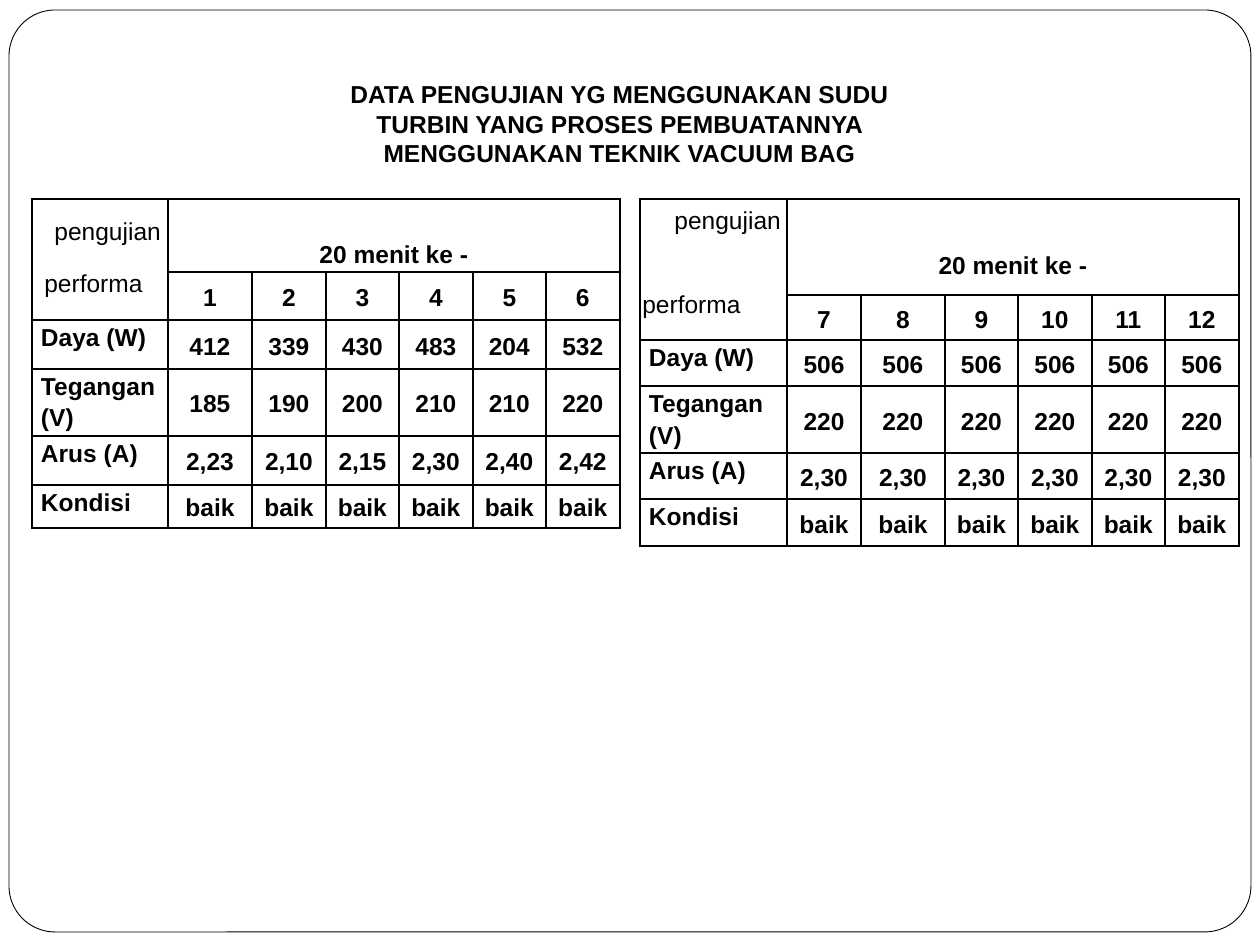
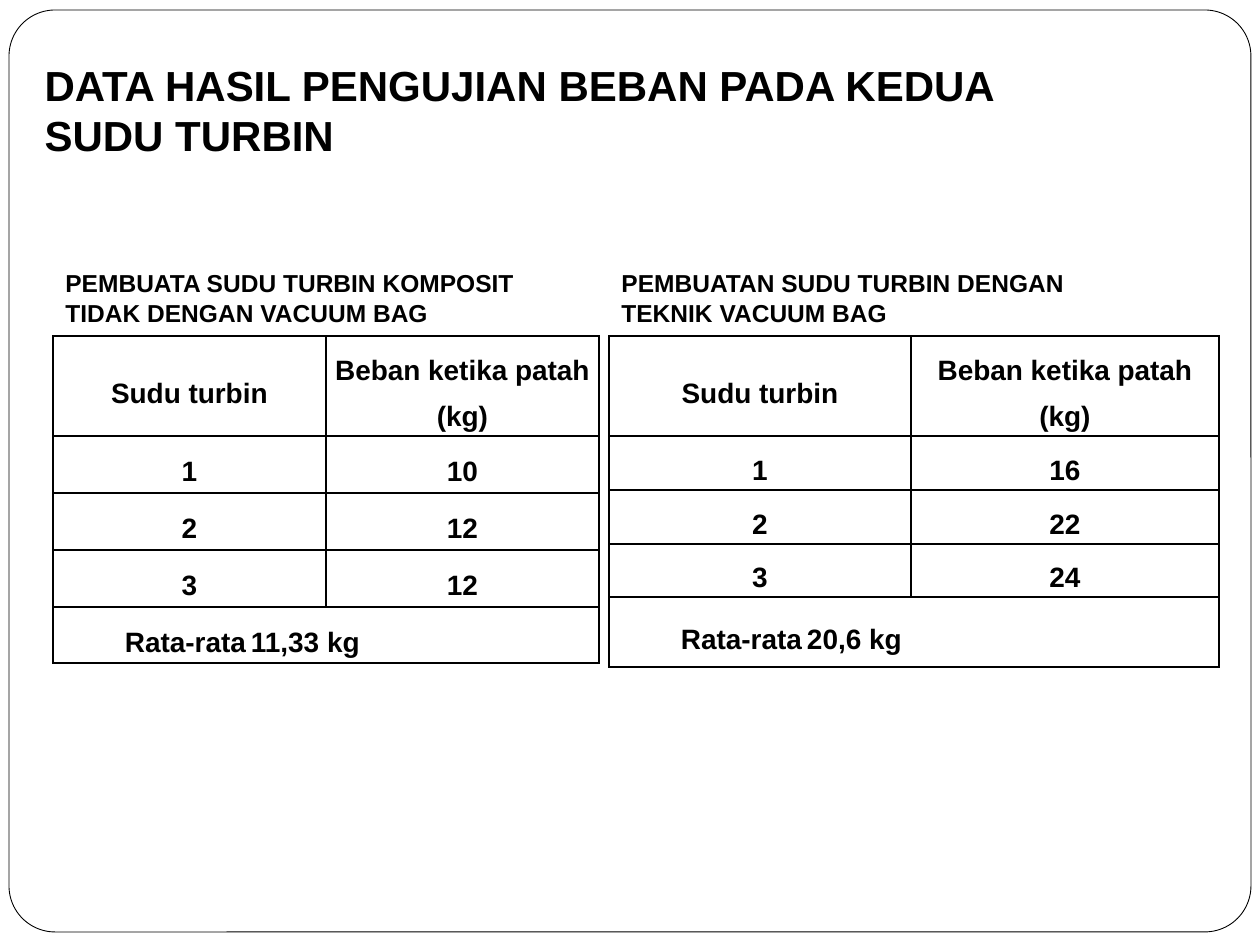
from lxml.etree import SubElement
from pptx import Presentation
from pptx.dml.color import RGBColor
from pptx.enum.shapes import MSO_SHAPE
from pptx.enum.text import MSO_ANCHOR as ANCHOR, MSO_AUTO_SIZE as AUTO, PP_ALIGN as ALIGN
from pptx.oxml import parse_xml
from pptx.oxml.ns import nsdecls, qn
from pptx.util import Inches, Pt

BLACK = RGBColor(0, 0, 0)
WHITE = RGBColor(255, 255, 255)
FONT = "Arial"
PX_PER_INCH = 126
CELL_INSET = 9
HEADER_DROP = 34

PERFORMANCE_LABELS = ["Daya (W)", "Tegangan (V)", "Arus (A)", "Kondisi"]


def px(n):
    """Turn pixels into EMU."""
    return Inches(n / PX_PER_INCH)


def style_paragraph(p, size, bold=False, align=ALIGN.LEFT, spacing=None):
    """Format one paragraph."""
    p.alignment = align
    p.line_spacing = spacing
    f = p.font
    f.name, f.size, f.bold = FONT, Pt(size), bold
    f.color.rgb = BLACK


def add_frame(slide):
    """Put the rounded page frame on the slide's layout, behind its placeholders."""
    sp = slide.shapes.add_shape(MSO_SHAPE.ROUNDED_RECTANGLE, px(9), px(10), px(1242), px(922))
    sp.adjustments[0] = 0.05
    sp.shadow.inherit = False
    sp.fill.solid()
    sp.fill.fore_color.rgb = WHITE
    sp.line.color.rgb = BLACK
    sp.line.width = Pt(0.5)
    sp.element.nvSpPr.cNvPr.set("id", "20")
    slide.slide_layout.shapes[0].element.addprevious(sp.element)


def fill_box(sp, box, text, size, bold, align=ALIGN.LEFT):
    """Place a text shape in a box and write its text."""
    sp.left, sp.top, sp.width, sp.height = map(px, box)
    tf = sp.text_frame
    tf.word_wrap = True
    tf.auto_size = AUTO.NONE
    tf.vertical_anchor = ANCHOR.TOP
    tf.text = text
    style_paragraph(tf.paragraphs[0], size, bold, align)


def add_label(slide, box, text, bold=False):
    """Add a small text box."""
    sp = slide.shapes.add_textbox(0, 0, 0, 0)
    fill_box(sp, box, text, 14, bold)


def add_tabs(p, stops):
    """Give a paragraph left tab stops."""
    tabs = SubElement(p._p.get_or_add_pPr(), qn("a:tabLst"))
    for stop in stops:
        SubElement(tabs, qn("a:tab"), pos=str(px(stop)), algn="l")


def style_cell(cell):
    """Give a cell thin black borders, no fill and narrow insets."""
    tc_pr = cell._tc.get_or_add_tcPr()
    for side in "LRTB":
        tc_pr.append(parse_xml(
            f'<a:ln{side} {nsdecls("a")} w="12700"><a:solidFill>'
            f'<a:srgbClr val="{BLACK}"/></a:solidFill></a:ln{side}>'))
    cell.fill.background()
    cell.margin_left = cell.margin_right = px(CELL_INSET)
    cell.margin_top = cell.margin_bottom = 0
    cell.vertical_anchor = ANCHOR.MIDDLE


def add_grid(slide, left, top, widths, heights):
    """Add an empty bordered table."""
    table = slide.shapes.add_table(len(heights), len(widths), px(left), px(top),
                                   px(sum(widths)), px(sum(heights))).table
    table.first_row = table.horz_banding = False
    for col, w in zip(table.columns, widths):
        col.width = px(w)
    for row, h in zip(table.rows, heights):
        row.height = px(h)
    for cell in table.iter_cells():
        style_cell(cell)
    return table


def write_cell(cell, text, size, align=ALIGN.CENTER, spacing=1.15):
    """Write bold text in a cell."""
    cell.text = text
    style_paragraph(cell.text_frame.paragraphs[0], size, True, align, spacing)


def add_performance_table(slide, left, top, widths, heights, first_test, values, corner):
    """Add a table of test results with its two corner labels."""
    table = add_grid(slide, left, top, widths, heights)
    table.cell(0, 0).merge(table.cell(1, 0))
    header = table.cell(0, 1)
    header.merge(table.cell(0, len(widths) - 1))
    header.margin_top = px(HEADER_DROP)
    write_cell(header, "20 menit ke -", 14)
    tests = [str(first_test + i) for i in range(len(widths) - 1)]
    for r, row in enumerate([tests] + values, 1):
        for c, value in enumerate(row, 1):
            write_cell(table.cell(r, c), value, 14)
    for r, label in enumerate(PERFORMANCE_LABELS, 2):
        cell = table.cell(r, 0)
        cell.vertical_anchor = ANCHOR.TOP
        write_cell(cell, label, 14, ALIGN.LEFT)
    for text, dx, dy, width in corner:
        add_label(slide, (left + dx, top + dy, width, 43), text)


def add_load_table(slide, left, top, widths, heights, caption, caption_width, loads, mean, stops):
    """Add a captioned table of breaking loads with a mean row."""
    add_label(slide, (left, top - 74, caption_width, 72), caption, True)
    table = add_grid(slide, left, top, widths, heights)
    rows = [("Sudu turbin", "Beban ketika patah (kg)")]
    rows += [(str(i), str(load)) for i, load in enumerate(loads, 1)]
    for r, row in enumerate(rows):
        for c, text in enumerate(row):
            write_cell(table.cell(r, c), text, 16, spacing=1.5)
    last = table.cell(len(rows), 0)
    last.merge(table.cell(len(rows), 1))
    add_tabs(last.text_frame.paragraphs[0], stops)
    write_cell(last, f"\tRata-rata\t{mean}", 16, ALIGN.LEFT, 1.5)


def build_performance_slide(slide):
    """Fill the slide of performance tests."""
    fill_box(slide.shapes.title, (336, 73, 567, 102),
             "DATA PENGUJIAN YG MENGGUNAKAN SUDU TURBIN YANG PROSES PEMBUATANNYA "
             "MENGGUNAKAN TEKNIK VACUUM BAG", 14, True, ALIGN.CENTER)
    add_performance_table(
        slide, 32, 199, [136, 84, 74, 73, 74, 73, 74], [73, 48, 49, 67, 49, 43], 1,
        [["412", "339", "430", "483", "204", "532"],
         ["185", "190", "200", "210", "210", "220"],
         ["2,23", "2,10", "2,15", "2,30", "2,40", "2,42"],
         ["baik"] * 6],
        [("pengujian", 10, 11, 168), ("performa", 0, 63, 136)])
    add_performance_table(
        slide, 640, 199, [147, 74, 84, 73, 74, 73, 74], [96, 45, 46, 67, 46, 47], 7,
        [[value] * 6 for value in ("506", "220", "2,30", "baik")],
        [("pengujian", 22, 0, 168), ("performa", -10, 84, 136)])


def build_load_slide(slide):
    """Fill the slide of load tests."""
    fill_box(slide.shapes.title, (32, 53, 987, 115),
             "DATA HASIL PENGUJIAN BEBAN PADA KEDUA SUDU TURBIN", 24, True)
    add_load_table(slide, 53, 336, [273, 273], [100, 57, 57, 57, 56],
                   "PEMBUATA SUDU TURBIN KOMPOSIT TIDAK DENGAN VACUUM BAG", 483,
                   [10, 12, 12], "11,33 kg", [116, 345])
    add_load_table(slide, 609, 336, [302, 308], [100, 54, 54, 53, 70],
                   "PEMBUATAN SUDU TURBIN DENGAN TEKNIK VACUUM BAG", 536,
                   [16, 22, 24], "20,6 kg", [240, 415])


def main():
    """Build and save the presentation."""
    prs = Presentation()
    prs.slide_width, prs.slide_height = Inches(10), Inches(7.5)
    layout = prs.slide_layouts[5]
    slides = [prs.slides.add_slide(layout) for _ in range(2)]
    add_frame(slides[0])
    build_performance_slide(slides[0])
    build_load_slide(slides[1])
    prs.save("out.pptx")


if __name__ == "__main__":
    main()
